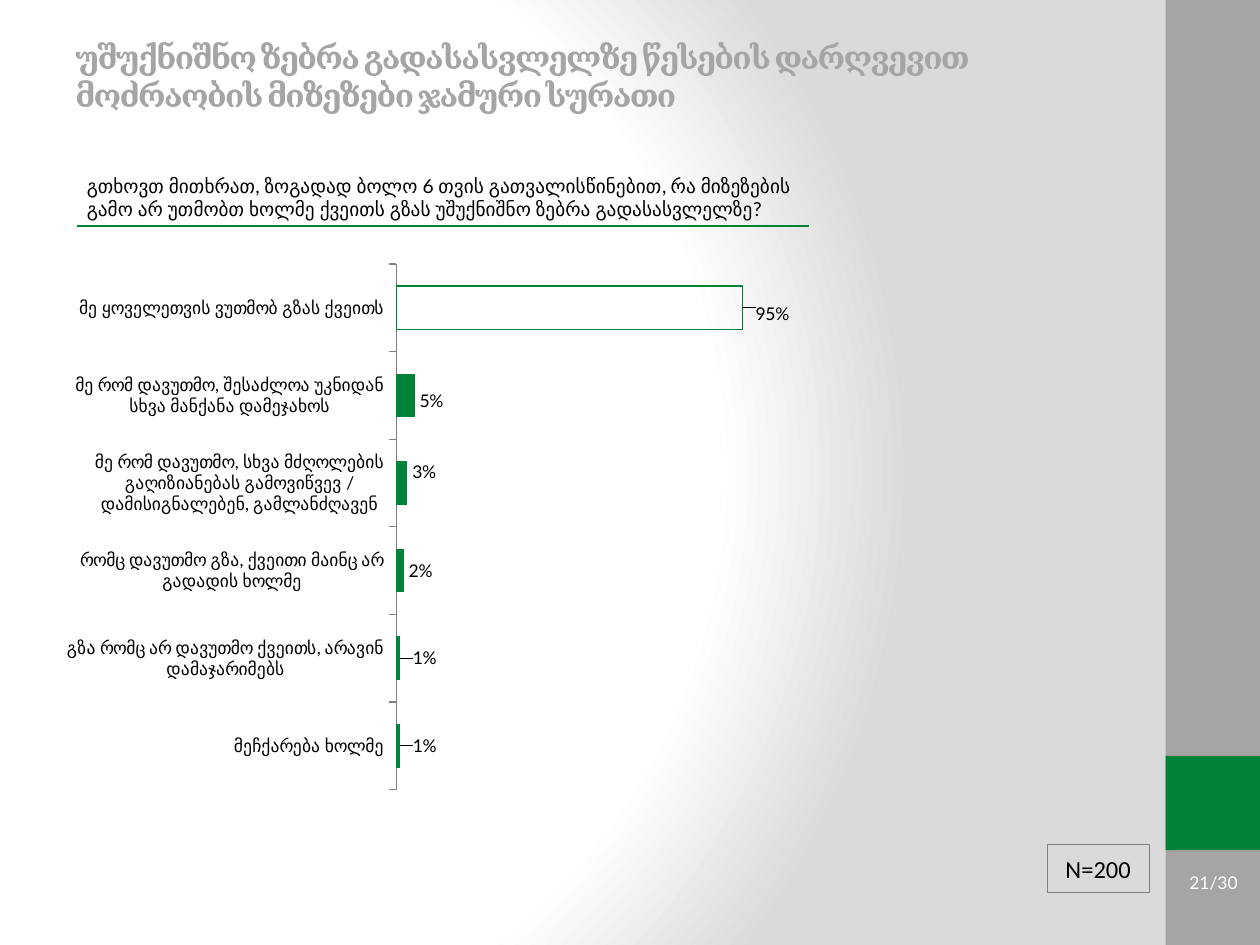
from lxml.etree import SubElement
from pptx import Presentation
from pptx.chart.data import CategoryChartData
from pptx.dml.color import RGBColor
from pptx.enum.chart import XL_CHART_TYPE, XL_LABEL_POSITION, XL_TICK_LABEL_POSITION, XL_TICK_MARK
from pptx.enum.shapes import MSO_CONNECTOR, MSO_SHAPE
from pptx.enum.text import MSO_ANCHOR, PP_ALIGN
from pptx.oxml import parse_xml
from pptx.oxml.ns import nsdecls, qn
from pptx.util import Cm, Pt

COLORS = {
    "green": "00823B",
    "gray": "A5A5A5",
    "border": "808080",
    "shade": "DADADA",
    "black": "000000",
    "white": "FFFFFF",
}

REASONS = [
    ("მე ყოველეთვის ვუთმობ გზას ქვეითს", 0.95, (0.01, 0.01)),
    ("მე რომ დავუთმო, შესაძლოა უკნიდან სხვა მანქანა დამეჯახოს", 0.05, (0, 0.01)),
    ("მე რომ დავუთმო, სხვა მძღოლების გაღიზიანებას გამოვიწვევ / დამისიგნალებენ, გამლანძღავენ",
     0.03, (0, -0.02)),
    ("რომც დავუთმო გზა, ქვეითი მაინც არ გადადის ხოლმე", 0.02, (0, 0)),
    ("გზა რომც არ დავუთმო ქვეითს, არავინ დამაჯარიმებს", 0.01, (0.01, 0)),
    ("მეჩქარება ხოლმე", 0.01, (0.01, 0)),
]


def rgb(name):
    return RGBColor.from_string(COLORS[name])


def add_layout(parent, position, **settings):
    layout = parse_xml(f"<c:layout {nsdecls('c')}><c:manualLayout/></c:layout>")
    for tag, value in settings.items():
        SubElement(layout[0], qn(f"c:{tag}"), val=str(value))
    for old in parent.findall(qn("c:layout")):
        parent.remove(old)
    parent.insert(position, layout)


class SlideBuilder:
    font = "Lato"

    def __init__(self, page):
        self.page = page

    def background(self):
        self.page.background.fill.solid()
        solid = next(self.page.element.iter(qn("a:solidFill")))
        stops = "".join(
            f'<a:gs pos="{place * 1000}"><a:srgbClr val="{COLORS[name]}"/></a:gs>'
            for place, name in ((0, "white"), (75, "white"), (100, "shade"))
        )
        gradient = parse_xml(
            f'<a:gradFill {nsdecls("a")} rotWithShape="1"><a:gsLst>{stops}</a:gsLst>'
            '<a:path path="circle"><a:fillToRect l="20000" t="50000" r="100000" b="50000"/>'
            "</a:path></a:gradFill>"
        )
        solid.getparent().replace(solid, gradient)

    def rectangle(self, left, top, width, height, fill=None, line=None):
        box = self.page.shapes.add_shape(
            MSO_SHAPE.RECTANGLE, Cm(left), Cm(top), Cm(width), Cm(height))
        box.shadow.inherit = False
        if fill:
            box.fill.solid()
            box.fill.fore_color.rgb = rgb(fill)
        else:
            box.fill.background()
        if line:
            box.line.color.rgb = rgb(line)
            box.line.width = Pt(0.5)
        else:
            box.line.fill.background()
        return box

    def label(self, box, text, size, color="black", font=None, bold=False,
              align=PP_ALIGN.LEFT, anchor=MSO_ANCHOR.MIDDLE, spacing=None):
        frame = box.text_frame
        frame.word_wrap = True
        frame.vertical_anchor = anchor
        frame.text = text
        para = frame.paragraphs[0]
        para.alignment = align
        span = para.runs[0]
        span.font.name = font or self.font
        span.font.size = Pt(size)
        span.font.bold = bold
        span.font.color.rgb = rgb(color)
        if spacing:
            next(box.element.iter(qn("a:rPr"))).set("spc", str(spacing))

    def text(self, left, top, width, height, text, size, **style):
        box = self.page.shapes.add_textbox(Cm(left), Cm(top), Cm(width), Cm(height))
        self.label(box, text, size, **style)

    def rule(self, left, right, top):
        line = self.page.shapes.add_connector(
            MSO_CONNECTOR.STRAIGHT, Cm(left), Cm(top), Cm(right), Cm(top))
        line.line.color.rgb = rgb("green")
        line.line.width = Pt(1)
        SubElement(line.element.spPr, qn("a:effectLst"))

    def bar_chart(self, left, top, width, height, reasons):
        data = CategoryChartData(number_format="0%")
        data.categories = [reason for reason, share, shift in reasons]
        data.add_series("Series 1", [share for reason, share, shift in reasons])
        chart = self.page.shapes.add_chart(
            XL_CHART_TYPE.BAR_CLUSTERED, Cm(left), Cm(top), Cm(width), Cm(height), data).chart
        chart.has_legend = False
        chart.has_title = False
        chart.font.name = self.font
        chart.font.size = Pt(12)
        chart.font.color.rgb = rgb("black")

        reason_axis = chart.category_axis
        reason_axis.reverse_order = True
        reason_axis.major_tick_mark = XL_TICK_MARK.OUTSIDE
        reason_axis.tick_label_position = XL_TICK_LABEL_POSITION.NEXT_TO_AXIS
        reason_axis.tick_labels.font.size = Pt(10)
        reason_axis.format.line.color.rgb = rgb("border")
        share_axis = chart.value_axis
        share_axis.minimum_scale = 0
        share_axis.maximum_scale = 1
        share_axis.has_major_gridlines = False
        share_axis.visible = False

        plot = chart.plots[0]
        plot.gap_width = 100
        plot.vary_by_categories = False
        series = plot.series[0]
        series.format.fill.solid()
        series.format.fill.fore_color.rgb = rgb("green")
        labels = series.data_labels
        labels.show_value = True
        labels.number_format = "0%"
        labels.number_format_is_linked = False
        labels.position = XL_LABEL_POSITION.OUTSIDE_END
        labels.font.size = Pt(10)
        for index in range(len(reasons)):
            label = series.points[index].data_label
            label.position = XL_LABEL_POSITION.OUTSIDE_END
            label.font.size = Pt(10)
        for node, (reason, share, (x, y)) in zip(chart.element.iter(qn("c:dLbl")), reasons):
            add_layout(node, 1, x=x, y=y)

        yielding = series.points[0].format
        yielding.fill.background()
        yielding.line.color.rgb = rgb("green")
        yielding.line.width = Pt(0.75)
        add_layout(next(chart.element.iter(qn("c:plotArea"))), 0, layoutTarget="inner",
                   xMode="edge", yMode="edge", x=0.43, y=0.06, w=0.46, h=0.94)


def main():
    deck = Presentation()
    deck.slide_width, deck.slide_height = Cm(25.4), Cm(19.05)
    slide = SlideBuilder(deck.slides.add_slide(deck.slide_layouts[6]))
    slide.background()
    slide.rectangle(23.5, 0, 1.9, 19.05, fill="gray")
    slide.rectangle(23.5, 15.24, 1.9, 1.9, fill="green")
    slide.text(23.7, 17.25, 1.5, 1.07, "21/30", 10, color="white", align=PP_ALIGN.RIGHT)
    slide.text(1.5, 3.38, 15.19, 1.19,
               "გთხოვთ მითხრათ, ზოგადად ბოლო 6 თვის გათვალისწინებით, რა მიზეზების გამო "
               "არ უთმობთ ხოლმე ქვეითს გზას უშუქნიშნო ზებრა გადასასვლელზე?",
               11, anchor=MSO_ANCHOR.TOP)
    slide.text(1.27, 0.76, 21.16, 1.55,
               "უშუქნიშნო ზებრა გადასასვლელზე წესების დარღვევით მოძრაობის მიზეზები ჯამური სურათი",
               18, color="gray", font="Cambria", bold=True, spacing=-100)
    slide.rule(1.55, 16.31, 4.55)
    sample = slide.rectangle(21.11, 17.02, 2.06, 0.97, line="border")
    slide.label(sample, "N=200", 14, font="Calibri", align=PP_ALIGN.CENTER)
    slide.bar_chart(1.12, 4.65, 15.98, 11.28, REASONS)
    deck.save("out.pptx")


if __name__ == "__main__":
    main()
